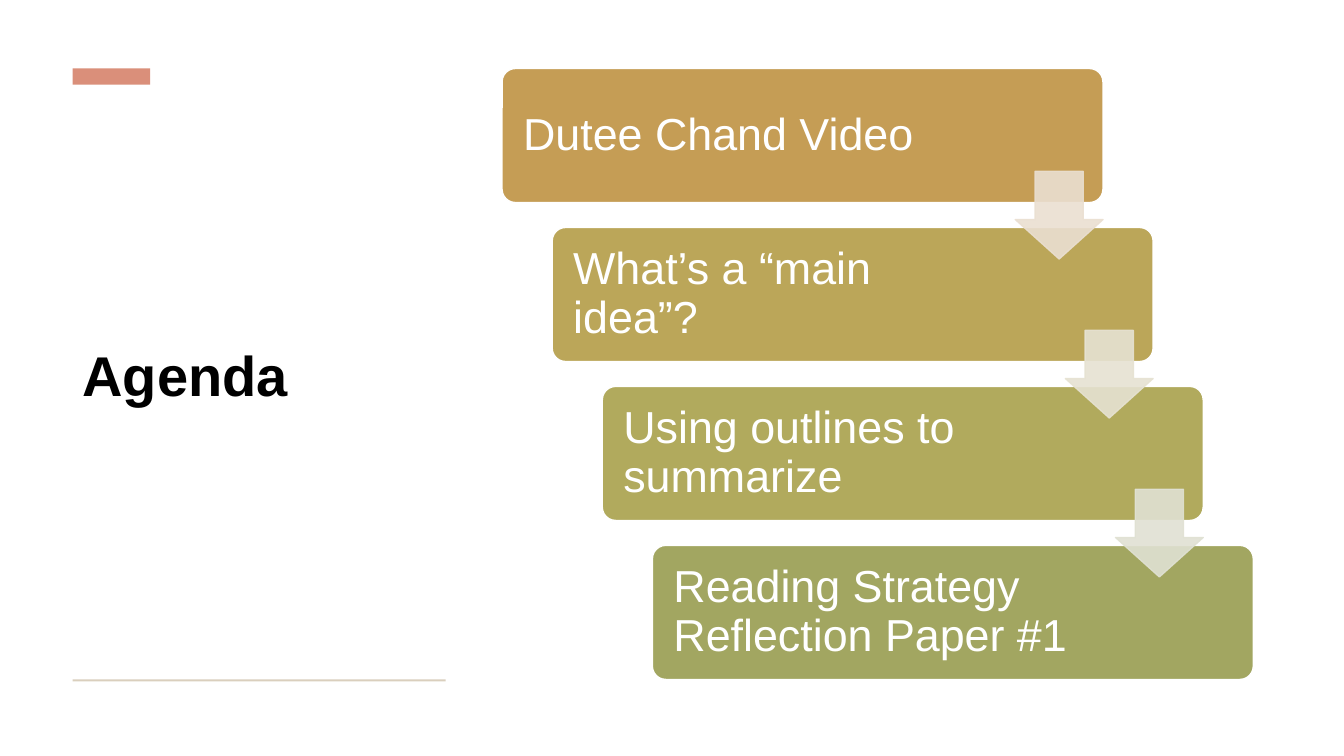
from lxml.etree import SubElement
from pptx import Presentation
from pptx.dml.color import RGBColor
from pptx.enum.shapes import MSO_SHAPE
from pptx.enum.text import MSO_ANCHOR
from pptx.oxml.ns import qn
from pptx.util import Inches, Pt

WHITE = RGBColor(0xFF, 0xFF, 0xFF)
BLACK = RGBColor(0x00, 0x00, 0x00)
ACCENT = RGBColor(0xDA, 0x8F, 0x7A)
RULE = RGBColor(0xDA, 0xCF, 0xBD)

AGENDA = [
    ("Dutee Chand Video", RGBColor(0xC5, 0x9D, 0x55)),
    ("What’s a “main idea”?", RGBColor(0xBB, 0xA6, 0x59)),
    ("Using outlines to summarize", RGBColor(0xB1, 0xAA, 0x5D)),
    ("Reading Strategy Reflection Paper #1", RGBColor(0xA2, 0xA6, 0x61)),
]
ARROW_COLORS = [
    RGBColor(0xEA, 0xDF, 0xD1),
    RGBColor(0xE6, 0xE2, 0xD2),
    RGBColor(0xE0, 0xE1, 0xD3),
]

# Staircase grid, in inches
LEFT, TOP = 4.98, 0.68
STEP_X, STEP_Y = 0.497, 1.577
STEP_W, STEP_H = 5.96, 1.33
ARROW = 0.87
ARROW_DX, ARROW_DY = STEP_W - ARROW, 1.02
MARGIN, COLUMN_W = 0.72, 3.7

prs = Presentation()
prs.slide_width, prs.slide_height = Inches(13.33), Inches(7.5)
slide = prs.slides.add_slide(prs.slide_layouts[6])


def add_block(preset, left, top, width, height, fill, outline=None):
    block = slide.shapes.add_shape(
        preset, Inches(left), Inches(top), Inches(width), Inches(height))
    block.shadow.inherit = False
    block.fill.solid()
    block.fill.fore_color.rgb = fill
    if outline is None:
        block.line.fill.background()
    else:
        block.line.color.rgb = outline
        block.line.width = Pt(1)
    return block


def write(frame, text, size, color, bold=False):
    frame.word_wrap = True
    frame.vertical_anchor = MSO_ANCHOR.MIDDLE
    paragraph = frame.paragraphs[0]
    paragraph.alignment = 1  # left
    paragraph.line_spacing = 0.9
    run = paragraph.add_run()
    run.text = text
    run.font.name = "Arial"
    run.font.size = Pt(size)
    run.font.bold = bold
    run.font.color.rgb = color


# Title column
title = slide.shapes.add_textbox(
    Inches(MARGIN), Inches(1.05), Inches(COLUMN_W), Inches(5.41))
write(title.text_frame, "Agenda", 40, BLACK, bold=True)
add_block(MSO_SHAPE.RECTANGLE, MARGIN, TOP, 0.77, 0.16, ACCENT)
add_block(MSO_SHAPE.RECTANGLE, MARGIN, 6.74, COLUMN_W, 0.02, RULE)

# Agenda steps
for row, (topic, color) in enumerate(AGENDA):
    step = add_block(MSO_SHAPE.ROUNDED_RECTANGLE, LEFT + row * STEP_X,
                     TOP + row * STEP_Y, STEP_W, STEP_H, color, WHITE)
    step.adjustments[0] = 0.1
    frame = step.text_frame
    frame.margin_left, frame.margin_right = Inches(0.17), Inches(1.53)
    frame.margin_top = frame.margin_bottom = Inches(0.13)
    write(frame, topic, 32, WHITE)

# Translucent arrows between the steps
for row, color in enumerate(ARROW_COLORS):
    arrow = add_block(MSO_SHAPE.DOWN_ARROW, LEFT + ARROW_DX + row * STEP_X,
                      TOP + ARROW_DY + row * STEP_Y, ARROW, ARROW, color, color)
    arrow.adjustments[0], arrow.adjustments[1] = 0.55, 0.45
    for tint in arrow.element.spPr.iter(qn("a:srgbClr")):
        SubElement(tint, qn("a:alpha")).set("val", "90000")

prs.save("out.pptx")
